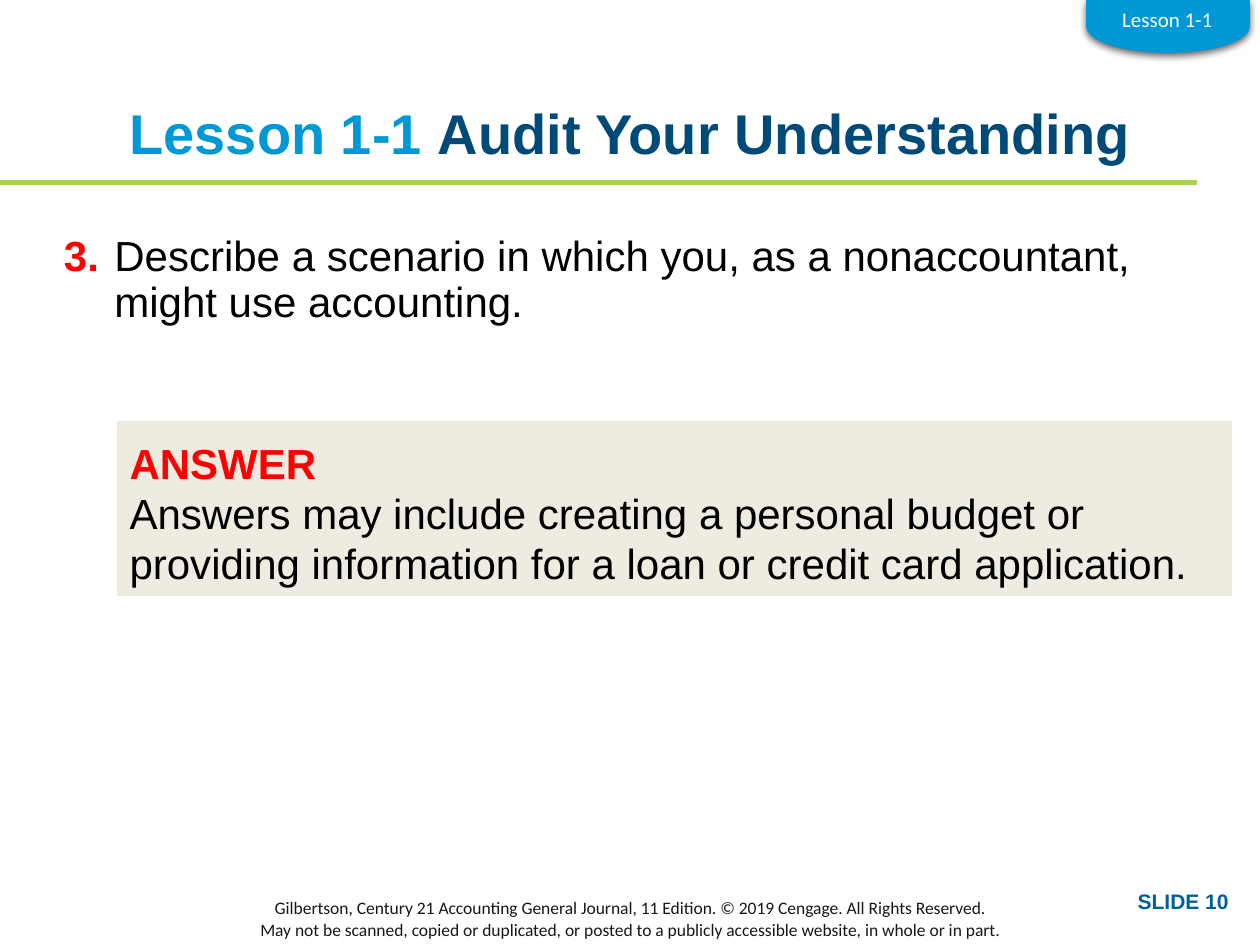
from lxml.etree import SubElement
from pptx import Presentation
from pptx.dml.color import RGBColor
from pptx.enum.shapes import MSO_CONNECTOR, MSO_SHAPE
from pptx.enum.text import MSO_ANCHOR, PP_ALIGN
from pptx.oxml.ns import qn
from pptx.util import Inches, Pt

HUES = {"sky": "0098D4", "navy": "004A78", "lime": "AAD24B", "red": "FF0000",
        "sand": "EEECE1", "ink": "181717", "black": "000000",
        "white": "FFFFFF", "teal": "006198"}

# Each paragraph is a list of runs: (text, hue, bold)
TITLE = [[("Lesson 1-1 ", "sky", True),
          ("Audit Your Understanding", "navy", True)]]
TASK = [[("3.\t", "red", True),
         ("Describe a scenario in which you, as a nonaccountant, "
          "might use accounting.", "black", False)]]
REPLY = [[("ANSWER", "red", True)],
         [("Answers may include creating a personal budget or providing "
           "information for a loan or credit card application.",
           "black", False)]]
RIGHTS = [[("Gilbertson, Century 21 Accounting General Journal, 11 Edition. "
            "© 2019 Cengage. All Rights Reserved.", "ink", False)],
          [("May not be scanned, copied or duplicated, or posted to a publicly "
            "accessible website, in whole or in part.", "ink", False)]]
LABEL = [[("Lesson 1-1", "white", False)]]
PAGE = [[("SLIDE 10", "teal", True)]]

WIDE, HIGH = 10, 7.5

deck = Presentation()
deck.slide_width, deck.slide_height = Inches(WIDE), Inches(HIGH)
slide = deck.slides.add_slide(deck.slide_layouts[6])
shapes = slide.shapes


def tint(name):
    return RGBColor.from_string(HUES[name])


def box(*area):
    return shapes.add_textbox(*map(Inches, area))


def block(kind, hue, *area):
    shape = shapes.add_shape(kind, *map(Inches, area))
    shape.shadow.inherit = False
    shape.fill.solid()
    shape.fill.fore_color.rgb = tint(hue)
    shape.line.fill.background()
    return shape


def write(shape, lines, size, font="Arial", align=PP_ALIGN.LEFT,
          anchor=MSO_ANCHOR.TOP, wrap=True):
    """Fill a shape with paragraphs of coloured runs."""
    frame = shape.text_frame
    frame.word_wrap, frame.vertical_anchor = wrap, anchor
    frame.text = "\n".join("".join(run[0] for run in line) for line in lines)
    for para, line in zip(frame.paragraphs, lines):
        para.text = ""
        para.alignment = align
        for text, hue, bold in line:
            run = para.add_run()
            run.text = text
            run.font.name, run.font.size = font, Pt(size)
            run.font.bold, run.font.color.rgb = bold, tint(hue)
    return frame


def hang(para, depth):
    props = para._p.get_or_add_pPr()
    props.set("marL", str(Inches(depth)))
    props.set("indent", str(-Inches(depth)))


def shade(shape):
    """Cast a soft shadow straight down."""
    effects = shape._element.spPr.find(qn("a:effectLst"))
    outer = SubElement(effects, qn("a:outerShdw"), blurRad=str(Pt(4.5)),
                       dist=str(Pt(1.5)), dir="5400000", rotWithShape="0")
    color = SubElement(outer, qn("a:srgbClr"), val=HUES["black"])
    SubElement(color, qn("a:alpha"), val="63000")


# Footer and rule
write(box(0, 7.14, WIDE, 0.3), RIGHTS, 10, "Calibri", PP_ALIGN.CENTER,
      MSO_ANCHOR.MIDDLE)
rule = shapes.add_connector(MSO_CONNECTOR.STRAIGHT, 0, Inches(1.45),
                            Inches(0.95 * WIDE), Inches(1.45))
rule.line.color.rgb, rule.line.width = tint("lime"), Pt(3)
SubElement(rule._element.spPr, qn("a:effectLst"))

# Title
frame = write(box(0.23, 0.84, 9.54, 0.74), TITLE, 32, align=PP_ALIGN.CENTER)
frame.margin_left = frame.margin_right = 0
frame.margin_top = frame.margin_bottom = 0
frame.paragraphs[0].line_spacing = 0.9

# Question and answer
frame = write(box(0.41, 1.82, 9.36, 4.08), TASK, 24)
hang(frame.paragraphs[0], 0.4)
frame.paragraphs[0].line_spacing = 0.9

panel = block(MSO_SHAPE.RECTANGLE, "sand", 0.93, 3.34, 8.85, 1.39)
frame = write(panel, REPLY, 24)
hang(frame.paragraphs[0], 0.38)
frame.paragraphs[0].line_spacing = 1.2

# Corner tab and page number
tab = block(MSO_SHAPE.FLOWCHART_DELAY, "sky", 9.06, -0.44, 0.42, 1.3)
tab.rotation = 90
shade(tab)
write(box(8.8, 0, 0.93, 0.3), LABEL, 12, "Calibri", PP_ALIGN.CENTER, wrap=False)
write(box(7.85, 7, 2, 0.3), PAGE, 12, align=PP_ALIGN.RIGHT)

deck.save("out.pptx")
